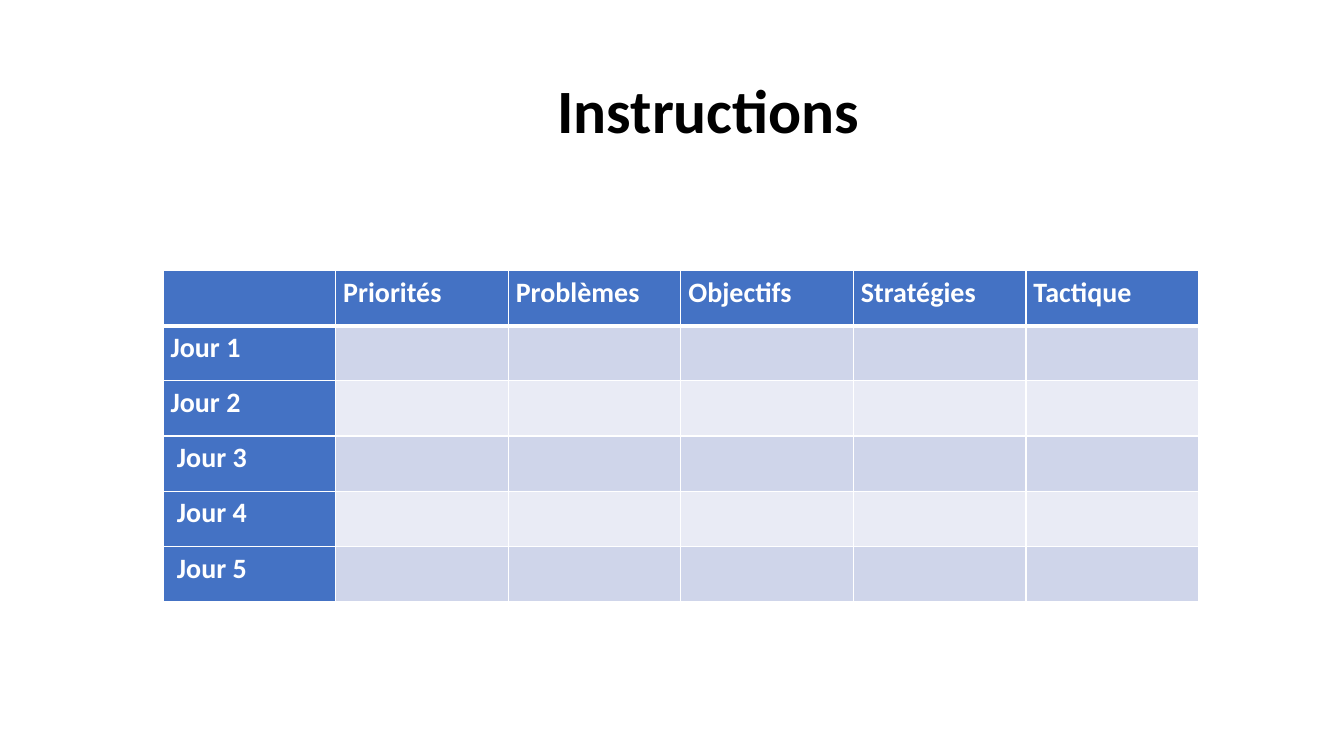
from lxml import etree
from pptx import Presentation
from pptx import util as u
from pptx.dml.color import RGBColor
from pptx.enum import text
from pptx.oxml.ns import qn

HEADINGS = ["", "Priorités", "Problèmes", "Objectifs", "Stratégies", "Tactique"]
DAYS = ["Jour 1", "Jour 2", "Jour 3", "Jour 4", "Jour 5"]
INDENTED_DAYS = DAYS[2:]
BLUE, WHITE, BLACK = "4472C4", "FFFFFF", "000000"
BANDS = ["CFD5EA", "E9EBF5"]
COLUMN_WIDTH, ROW_HEIGHT = u.Cm(4.35), u.Cm(1.39)


def format_font(font, size, color):
    values = {"name": "Calibri", "size": u.Pt(size), "bold": True}
    for key, value in values.items():
        setattr(font, key, value)
    font.color.rgb = RGBColor.from_string(color)


def add_borders(cell, top, bottom):
    """Draw white cell borders; top and bottom are widths in points."""
    properties = cell._tc.get_or_add_tcPr()
    widths = {"a:lnL": 1, "a:lnR": 1, "a:lnT": top, "a:lnB": bottom}
    for position, (side, width) in enumerate(widths.items()):
        line = etree.Element(qn(side), w=str(u.Pt(width)))
        fill = etree.SubElement(line, qn("a:solidFill"))
        etree.SubElement(fill, qn("a:srgbClr"), val=WHITE)
        properties.insert(position, line)


prs = Presentation()
prs.slide_width, prs.slide_height = u.Cm(33.87), u.Cm(19.05)
slide = prs.slides.add_slide(prs.slide_layouts[5])

title = slide.shapes.title
place = {"left": 2.33, "top": 1.01, "width": 29.21, "height": 3.68}
for key, value in place.items():
    setattr(title, key, u.Cm(value))
title.text_frame.text = "Instructions"
title.text_frame.margin_left = u.Cm(11.72)
title.text_frame.vertical_anchor = text.MSO_ANCHOR.MIDDLE
heading = title.text_frame.paragraphs[0]
heading.alignment = text.PP_ALIGN.LEFT
heading.line_spacing = 0.9
format_font(heading.runs[0].font, 44, BLACK)

rows = [HEADINGS] + [[day] + [""] * (len(HEADINGS) - 1) for day in DAYS]
plan = slide.shapes.add_table(
    len(rows), len(HEADINGS), u.Cm(4.11), u.Cm(6.82),
    COLUMN_WIDTH * len(HEADINGS), ROW_HEIGHT * len(rows)).table
for column in plan.columns:
    column.width = COLUMN_WIDTH

for r, labels in enumerate(rows):
    plan.rows[r].height = ROW_HEIGHT
    for c, label in enumerate(labels):
        cell = plan.cell(r, c)
        cell.fill.solid()
        color = BLUE if r == 0 or c == 0 else BANDS[(r - 1) % 2]
        cell.fill.fore_color.rgb = RGBColor.from_string(color)
        add_borders(cell, top=3 if r == 1 else 1, bottom=3 if r == 0 else 1)
        if not label:
            continue
        left = 0.35 if label in INDENTED_DAYS else 0.19
        margins = {"left": left, "top": 0, "right": 0.19, "bottom": 0}
        for side, margin in margins.items():
            setattr(cell, f"margin_{side}", u.Cm(margin))
        cell.text = label
        paragraph = cell.text_frame.paragraphs[0]
        paragraph.line_spacing = 1.15
        paragraph.space_after = u.Pt(10)
        format_font(paragraph.runs[0].font, 20, WHITE)

prs.save("out.pptx")
